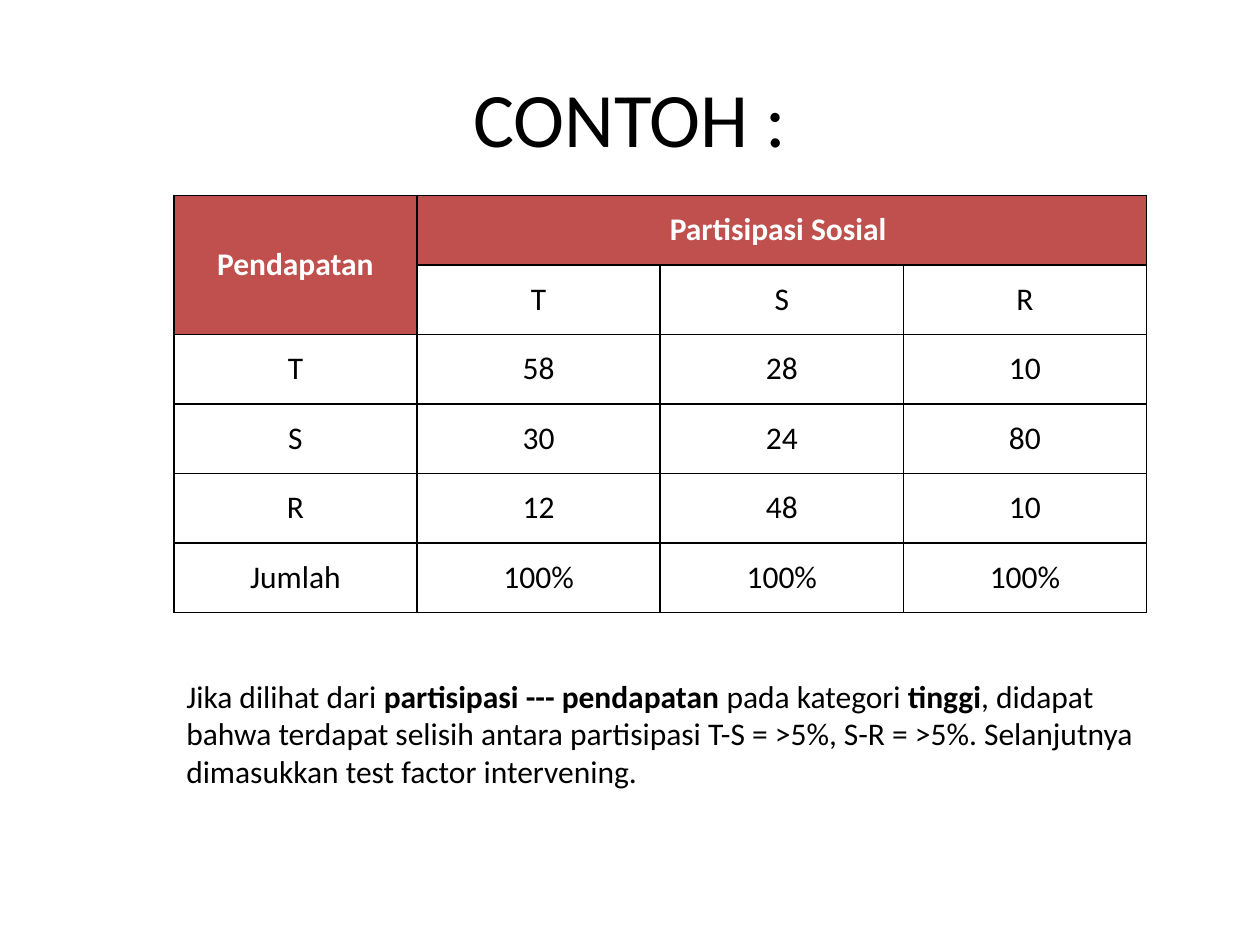
"""Build a slide with a cross table of income and social participation."""
from lxml import etree
from pptx import Presentation
from pptx.dml.color import RGBColor
from pptx.enum.text import MSO_ANCHOR, PP_ALIGN
from pptx.oxml.ns import qn
from pptx.util import Inches, Pt

CENTER = PP_ALIGN.CENTER
MIDDLE = MSO_ANCHOR.MIDDLE

WIDTH, HEIGHT = 10, 7.5
FONT, BLACK, WHITE, RED = "Calibri", "000000", "FFFFFF", "C0504D"
TITLE = "CONTOH :"
HEADER_ROWS = [
    ["Pendapatan", "Partisipasi Sosial ", None, None],
    [None, "T", "S", "R"],
]
DATA_ROWS = [
    ["T", "58", "28", "10"],
    ["S", "30", "24", "80"],
    ["R", "12", "48", "10"],
    ["Jumlah", "100%", "100%", "100%"],
]
MERGES = [((0, 0), (1, 0)), ((0, 1), (0, 3))]
NOTE = [
    ("Jika dilihat dari ", False),
    ("partisipasi --- pendapatan ", True),
    ("pada kategori ", False),
    ("tinggi", True),
    (", didapat bahwa terdapat selisih antara partisipasi T-S = >5%, "
     "S-R = >5%. Selanjutnya dimasukkan test factor intervening.", False),
]
TITLE_AREA = (0.5, 0.3, 9, 1.25)
TABLE_AREA = (1.38, 1.55, 7.72, 3.31)
NOTE_AREA = (1.38, 5.32, 7.72, 1.01)


def color(value):
    return RGBColor.from_string(value)


def add_span(para, text, size=18, bold=False, ink=BLACK):
    span = para.add_run()
    span.text = text
    formats = {"name": FONT, "size": Pt(size), "bold": bold}
    for name, value in formats.items():
        setattr(span.font, name, value)
    span.font.color.rgb = color(ink)


def fill_cell(cell, background):
    properties = cell._tc.get_or_add_tcPr()
    for side in ("a:lnL", "a:lnR", "a:lnT", "a:lnB"):
        line = etree.SubElement(properties, qn(side), w=str(Pt(1)))
        solid = etree.SubElement(line, qn("a:solidFill"))
        etree.SubElement(solid, qn("a:srgbClr"), val=BLACK)
    cell.fill.solid()
    cell.fill.fore_color.rgb = color(background)
    cell.vertical_anchor = MIDDLE


def add_title(page):
    title = page.shapes.title
    for name, value in zip(("left", "top", "width", "height"), TITLE_AREA):
        setattr(title, name, Inches(value))
    title.text_frame.vertical_anchor = MIDDLE
    para = title.text_frame.paragraphs[0]
    para.alignment = CENTER
    add_span(para, TITLE, size=44)


def add_cross_table(page):
    rows = HEADER_ROWS + DATA_ROWS
    area = map(Inches, TABLE_AREA)
    table = page.shapes.add_table(len(rows), len(rows[0]), *area).table
    for start, end in MERGES:
        table.cell(*start).merge(table.cell(*end))
    headings = {start for start, _ in MERGES}
    merged = {(0, 0), (1, 0), (0, 1), (0, 2), (0, 3)}
    for row, texts in enumerate(rows):
        for column, text in enumerate(texts):
            cell = table.cell(row, column)
            fill_cell(cell, RED if (row, column) in merged else WHITE)
            if text is None:
                continue
            heading = (row, column) in headings
            para = cell.text_frame.paragraphs[0]
            para.alignment = CENTER
            add_span(para, text, bold=heading, ink=WHITE if heading else BLACK)


def add_note(page):
    box = page.shapes.add_textbox(*map(Inches, NOTE_AREA))
    box.text_frame.word_wrap = True
    for text, bold in NOTE:
        add_span(box.text_frame.paragraphs[0], text, bold=bold)


def main():
    deck = Presentation()
    deck.slide_width, deck.slide_height = Inches(WIDTH), Inches(HEIGHT)
    page = deck.slides.add_slide(deck.slide_layouts[5])
    add_title(page)
    add_cross_table(page)
    add_note(page)
    deck.save("out.pptx")


if __name__ == "__main__":
    main()
